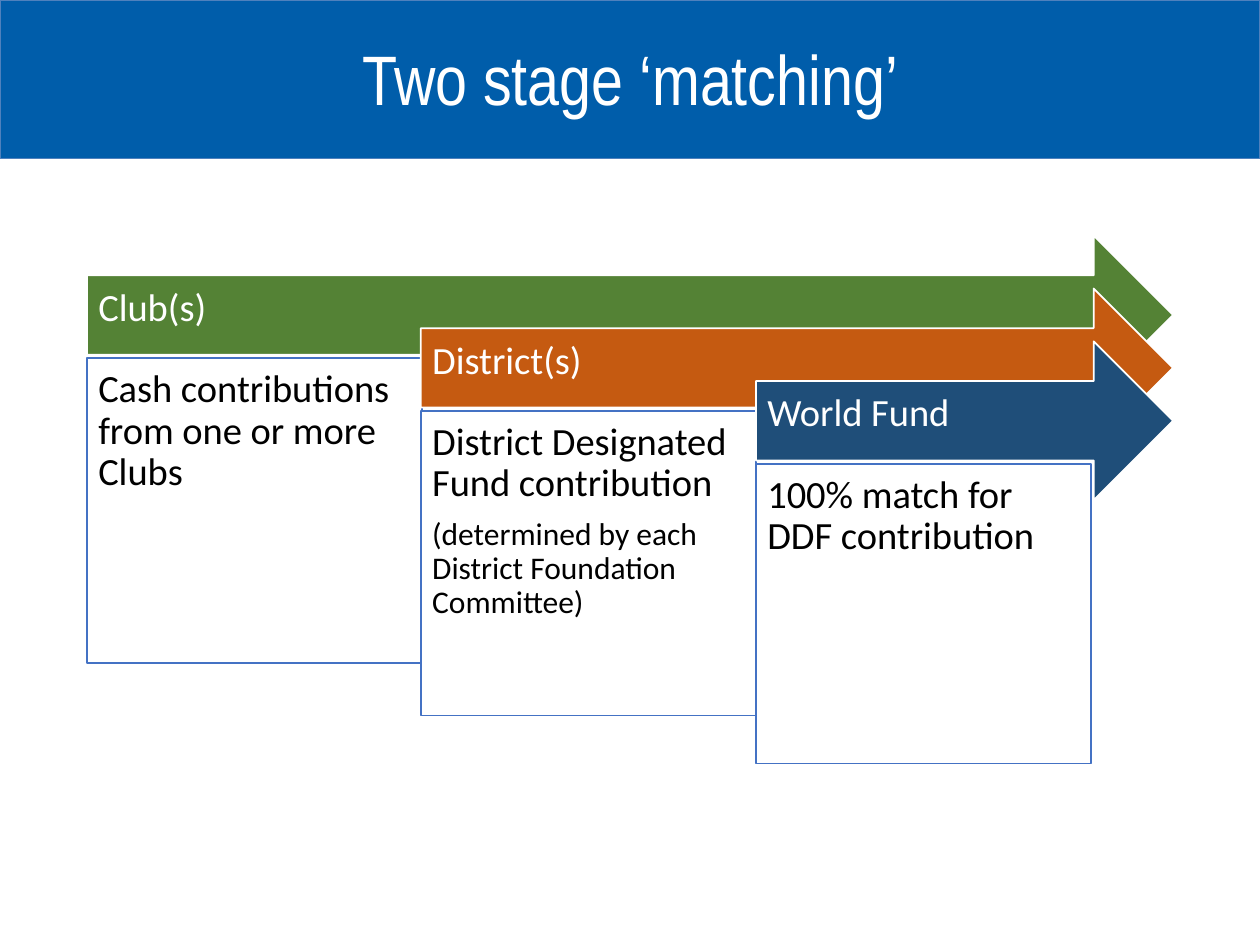
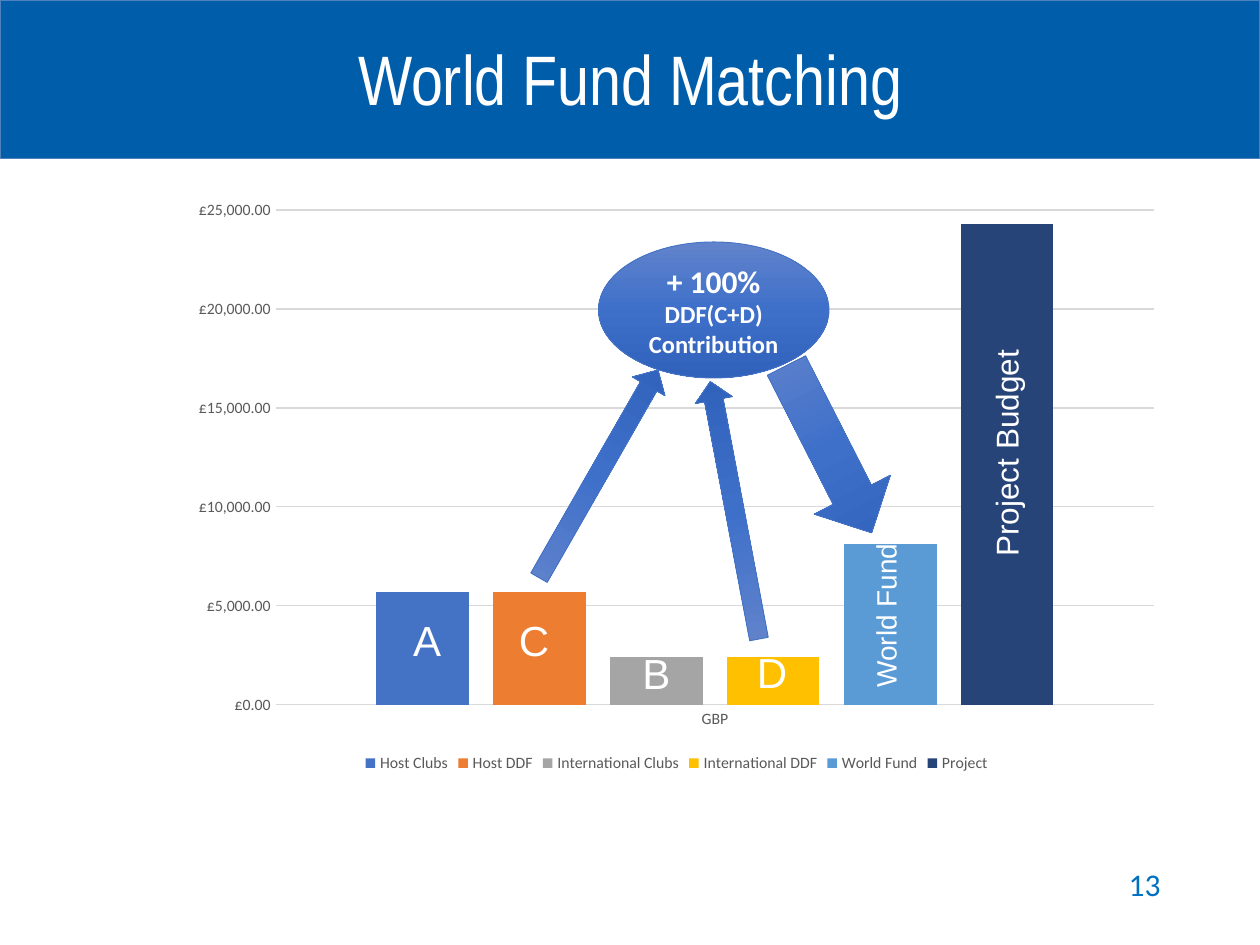
import copy

import pptx
import pptx.chart.data
import pptx.dml.color
import pptx.enum.chart
import pptx.enum.shapes
import pptx.enum.text
import pptx.oxml.ns
import pptx.util

SHAPE = pptx.enum.shapes.MSO_SHAPE
ALIGN = pptx.enum.text.PP_ALIGN
ANCHOR = pptx.enum.text.MSO_ANCHOR
PX = 9144
COLORS = {
    "band": "005DAA", "band_edge": "4F81BD", "white": "FFFFFF", "black": "000000",
    "club": "548235", "district": "C55A11", "world": "1F4E79", "edge": "4472C4",
    "axis_text": "595959", "grid": "D9D9D9", "page": "0070C0",
    "glow_top": "6183CB", "glow_mid": "3E70CA", "glow_end": "3062BB",
    "host_clubs": "4472C4", "host_ddf": "ED7D31", "intl_clubs": "A5A5A5",
    "intl_ddf": "FFC000", "world_fund": "5B9BD5", "project": "264478",
}
GLOW = ("glow_top", "glow_mid", "glow_end")


def rgb(name):
    return pptx.dml.color.RGBColor.from_string(COLORS[name])


class Deck:
    def __init__(self):
        self.show = pptx.Presentation()
        self.show.slide_width, self.show.slide_height = 1000 * PX, 750 * PX
        self.slide = None

    def page(self, title):
        self.slide = self.show.slides.add_slide(self.show.slide_layouts[6])
        self.shape(SHAPE.RECTANGLE, (0, 0, 1000, 126), "band", "band_edge", 0.5)
        self.text((69, 17, 862, 98), [(title, 40)], font="Arial Narrow",
                  align=ALIGN.CENTER, anchor=ANCHOR.MIDDLE, spacing=0.9)

    def shape(self, kind, box, fill, edge, weight, rotation=0):
        shape = self.slide.shapes.add_shape(kind, *(n * PX for n in box))
        shape.shadow.inherit = False
        shape.rotation = rotation
        if fill == GLOW:
            self.glow(shape)
        else:
            shape.fill.solid()
            shape.fill.fore_color.rgb = rgb(fill)
        shape.line.color.rgb = rgb(edge)
        shape.line.width = pptx.util.Pt(weight)
        return shape

    def glow(self, shape):
        shape.fill.gradient()
        shape.fill.gradient_angle = 270
        stops = next(shape.element.iter(pptx.oxml.ns.qn("a:gsLst")))
        stops.insert(1, copy.deepcopy(stops[0]))
        for i, (stop, name) in enumerate(zip(shape.fill.gradient_stops, GLOW)):
            stop.position = i / 2
            stop.color.rgb = rgb(name)

    def text(self, box, lines, rotation=0, wrap=True, **style):
        label = self.slide.shapes.add_textbox(*(n * PX for n in box))
        label.rotation = rotation
        self.fill_text(label, lines, wrap=wrap, **style)

    def fill_text(self, holder, lines, font="Calibri", color="white", align=ALIGN.LEFT,
                  anchor=ANCHOR.TOP, spacing=None, after=None, insets=(10, 5, 10, 5),
                  bold=False, wrap=True):
        frame = holder.text_frame
        frame.word_wrap = wrap
        frame.vertical_anchor = anchor
        (frame.margin_left, frame.margin_top,
         frame.margin_right, frame.margin_bottom) = (n * PX for n in insets)
        frame.text = "\n".join(line for line, _ in lines)
        for paragraph, (_, size) in zip(frame.paragraphs, lines):
            paragraph.alignment = align
            paragraph.line_spacing = spacing
            if after:
                paragraph.space_after = pptx.util.Pt(size * after)
            for run in paragraph.runs:
                self.style_font(run.font, size, color, font)
                run.font.bold = bold

    def style_font(self, font, size, color, name="Calibri"):
        font.name = name
        font.size = pptx.util.Pt(size)
        font.color.rgb = rgb(color)

    def columns(self, box, category, series, top, step):
        data = pptx.chart.data.CategoryChartData()
        data.categories = [category]
        for name, value, _ in series:
            data.add_series(name, [value])
        chart = self.slide.shapes.add_chart(
            pptx.enum.chart.XL_CHART_TYPE.COLUMN_CLUSTERED,
            *(n * PX for n in box), data).chart
        self.style_font(chart.font, 10, "black")
        chart.has_title = False
        chart.has_legend = True
        chart.legend.position = pptx.enum.chart.XL_LEGEND_POSITION.BOTTOM
        chart.legend.include_in_layout = False
        self.style_font(chart.legend.font, 9, "axis_text")

        plot = chart.plots[0]
        plot.gap_width, plot.overlap, plot.vary_by_categories = 219, -27, False
        for bar, (_, _, color) in zip(plot.series, series):
            bar.format.fill.solid()
            bar.format.fill.fore_color.rgb = rgb(color)

        amounts, categories = chart.value_axis, chart.category_axis
        for axis in (amounts, categories):
            axis.major_tick_mark = pptx.enum.chart.XL_TICK_MARK.NONE
            axis.minor_tick_mark = pptx.enum.chart.XL_TICK_MARK.NONE
            self.style_font(axis.tick_labels.font, 9, "axis_text")
        amounts.minimum_scale, amounts.maximum_scale, amounts.major_unit = 0, top, step
        amounts.tick_labels.number_format = '"£"#,##0.00'
        amounts.tick_labels.number_format_is_linked = False
        amounts.format.line.fill.background()
        for line in (amounts.major_gridlines.format.line, categories.format.line):
            line.color.rgb = rgb("grid")
            line.width = pptx.util.Pt(0.75)


def matching_stages(deck):
    deck.page("Two stage ‘matching’")
    stages = [
        ("Club(s)", "club", 242, [("Cash contributions from one or more Clubs", 22)]),
        ("District(s)", "district", 242,
         [("District Designated Fund contribution", 22),
          ("(determined by each District Foundation Committee)", 18)]),
        ("World Fund", "world", 238, [("100% match for DDF contribution", 22)]),
    ]
    for i, (source, color, height, details) in enumerate(stages):
        left, top = 69 + 531 * i // 2, 187 + 42 * i
        width = 931 - left
        deck.shape(SHAPE.RIGHT_ARROW, (left, top, width, 126), color, "white", 1)
        deck.text((left, top + 32, width - 31, 63), [(source, 22)], spacing=0.9,
                  anchor=ANCHOR.MIDDLE, after=0.35, insets=(9, 9, 28, 20))
        panel = deck.shape(SHAPE.RECTANGLE, (left, top + 97, 266, height),
                           "white", "edge", 1)
        deck.fill_text(panel, details, color="black", spacing=0.9, after=0.35,
                       insets=(9, 9, 9, 9))


def world_fund_matching(deck):
    deck.page("World Fund Matching")
    deck.columns((142, 150, 790, 467), "GBP", [
        ("Host Clubs", 5700, "host_clubs"),
        ("Host DDF", 5700, "host_ddf"),
        ("International Clubs", 2400, "intl_clubs"),
        ("International DDF", 2400, "intl_ddf"),
        ("World Fund", 8100, "world_fund"),
        ("Project", 24300, "project"),
    ], top=25000, step=5000)
    deck.text((706, 682, 225, 40), [("13", 18)], color="page", align=ALIGN.RIGHT)

    match = deck.shape(SHAPE.OVAL, (475, 192, 183, 108), GLOW, "edge", 0.5)
    deck.fill_text(match, [("+ 100%", 18), ("DDF(C+D) Contribution", 14)],
                   align=ALIGN.CENTER, anchor=ANCHOR.MIDDLE, bold=True)

    for letter, left, top in [("A", 318, 483), ("C", 402, 483),
                              ("B", 500, 509), ("D", 591, 508)]:
        deck.text((left, top, 44, 50), [(letter, 24)], font="Arial", wrap=False)
    for bar_name, size, box in [("World Fund", 16, (631, 465, 144, 37)),
                                ("Project Budget", 18, (685, 318, 227, 40))]:
        deck.text(box, [(bar_name, size)], rotation=270, font="Arial")
    for box, rotation in [((624, 282, 68, 149), 333),
                          ((460, 281, 30, 190), 209.8),
                          ((568, 301, 30, 208), 169.3)]:
        deck.shape(SHAPE.DOWN_ARROW, box, GLOW, "edge", 0.5, rotation)


def main():
    deck = Deck()
    matching_stages(deck)
    world_fund_matching(deck)
    deck.show.save("out.pptx")


if __name__ == "__main__":
    main()
